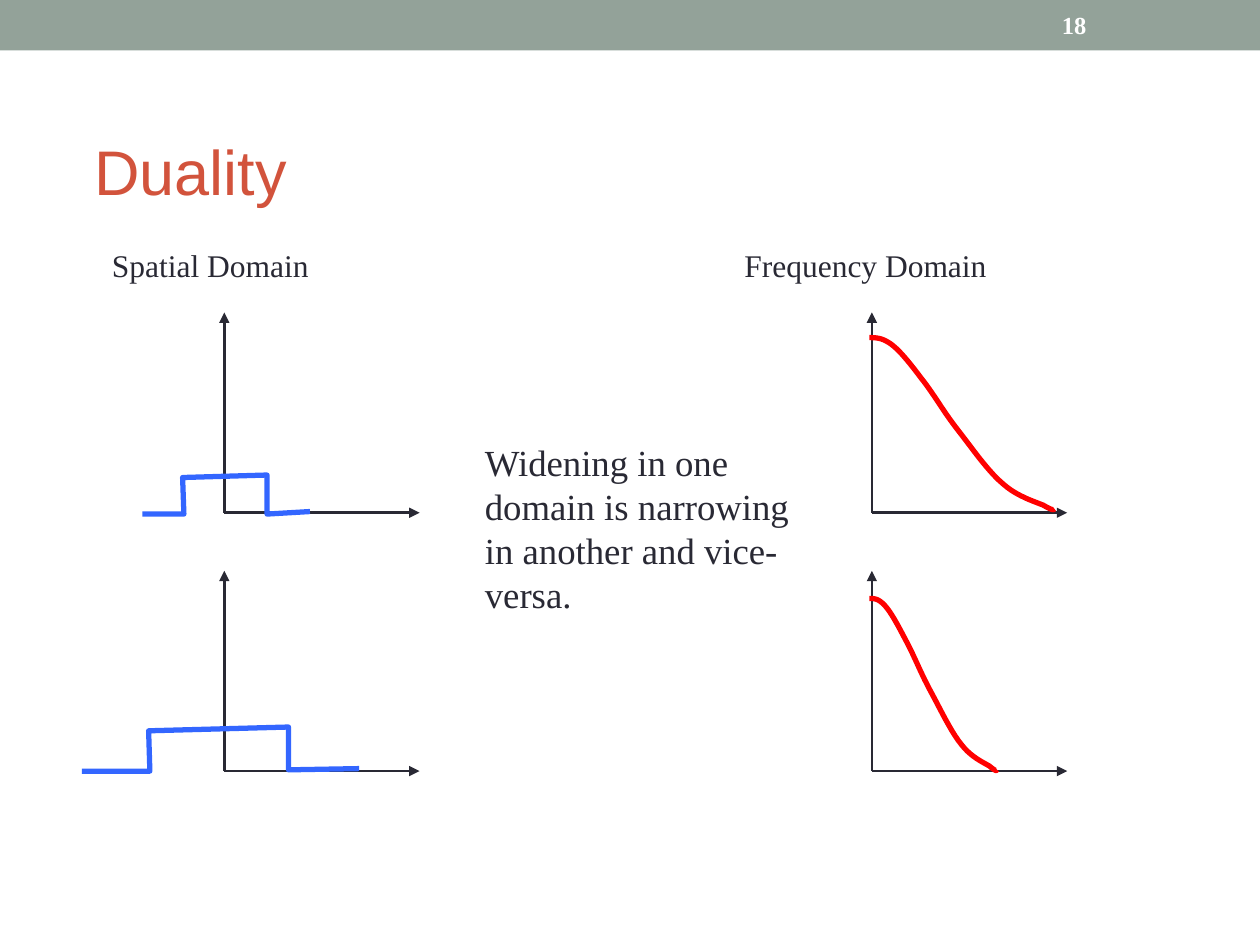
from lxml.etree import SubElement
from pptx import Presentation
from pptx.dml.color import RGBColor
from pptx.enum.shapes import MSO_CONNECTOR, MSO_SHAPE
from pptx.enum.text import MSO_ANCHOR
from pptx.oxml.ns import qn
from pptx.util import Inches, Pt

COLORS = {
    "band": "93A299",
    "title": "D2533C",
    "ink": "292934",
    "white": "FFFFFF",
    "pulse": "3366FF",
    "response": "FF0000",
}
SERIF = "Times New Roman"

AXIS_WIDTH, AXIS_HEIGHT = 1.55, 1.59
SPATIAL_X, FREQUENCY_X = 1.78, 6.92
ROWS = (4.07, 6.12)  # height of each row's horizontal axis

# Pulse corners, as offsets from the origin of the axes
NARROW_PULSE = [(0.68, -0.01), (0.34, 0.01), (0.34, -0.3),
                (-0.33, -0.28), (-0.32, 0.01), (-0.65, 0.01)]
WIDE_PULSE = [(1.07, -0.02), (0.51, -0.01), (0.51, -0.35),
              (-0.6, -0.32), (-0.59, 0), (-1.13, 0)]

# Bezier knots and handles of the frequency response, from its upper left end
RESPONSE = [(0, 0), (0.05, 0), (0.1, 0), (0.17, 0.05),
            (0.24, 0.1), (0.32, 0.2), (0.41, 0.32),
            (0.5, 0.43), (0.59, 0.59), (0.7, 0.73),
            (0.81, 0.87), (0.94, 1.06), (1.06, 1.16),
            (1.17, 1.26), (1.31, 1.3), (1.38, 1.33),
            (1.45, 1.37), (1.46, 1.37), (1.47, 1.36)]


def color(name):
    return RGBColor.from_string(COLORS[name])


def add_text(slide, box, text, size, ink="ink", font=SERIF, bold=False,
             anchor=MSO_ANCHOR.TOP):
    frame = slide.shapes.add_textbox(*map(Inches, box)).text_frame
    frame.word_wrap = True
    frame.vertical_anchor = anchor
    paragraph = frame.paragraphs[0]
    paragraph.text = text
    paragraph.font.name = font
    paragraph.font.size = Pt(size)
    paragraph.font.bold = bold
    paragraph.font.color.rgb = color(ink)


def add_arrow(shapes, start, end):
    arrow = shapes.add_connector(MSO_CONNECTOR.STRAIGHT,
                                 *map(Inches, (*start, *end)))
    arrow.line.color.rgb = color("ink")
    arrow.line.width = Pt(1.5)
    properties = arrow._element.spPr
    SubElement(properties.find(qn("a:ln")), qn("a:tailEnd"), type="triangle")
    SubElement(properties, qn("a:effectLst"))


def add_curve(shapes, points, ink):
    points = [(Inches(x), Inches(y)) for x, y in points]
    builder = shapes.build_freeform(*points[0])
    builder.add_line_segments(points[1:], close=False)
    curve = builder.convert_to_shape()
    curve.shadow.inherit = False
    curve.fill.background()
    curve.line.color.rgb = color(ink)
    curve.line.width = Pt(3)


def bezier_points(knots, steps=10):
    """Sample a chain of cubic Bezier segments."""
    points = [knots[0]]
    for first in range(0, len(knots) - 1, 3):
        segment = knots[first:first + 4]
        for step in range(1, steps + 1):
            t = step / steps
            weights = ((1 - t) ** 3, 3 * t * (1 - t) ** 2,
                       3 * t ** 2 * (1 - t), t ** 3)
            points.append(tuple(
                sum(weight * knot[axis] for weight, knot in zip(weights, segment))
                for axis in (0, 1)))
    return points


def add_plot(slide, x, y, offsets, ink):
    """Axes with their origin at (x, y), and a curve over them."""
    shapes = slide.shapes.add_group_shape().shapes
    add_arrow(shapes, (x, y), (x + AXIS_WIDTH, y))
    add_arrow(shapes, (x, y), (x, y - AXIS_HEIGHT))
    add_curve(shapes, [(x + dx, y + dy) for dx, dy in offsets], ink)


def add_header(slide, left, top, width, height):
    band = slide.shapes.add_shape(MSO_SHAPE.RECTANGLE,
                                  *map(Inches, (left, top, width, height)))
    band.shadow.inherit = False
    band.fill.solid()
    band.fill.fore_color.rgb = color("band")
    band.line.fill.background()
    add_text(slide, (left + 8.33, top + 0.02, 1.17, 0.36), "18", 14, "white",
             bold=True, anchor=MSO_ANCHOR.MIDDLE)


def add_spatial_column(slide, x):
    add_text(slide, (x - 0.99, 1.9, 1.78, 0.4), "Spatial Domain", 18)
    for y, pulse in zip(ROWS, (NARROW_PULSE, WIDE_PULSE)):
        add_plot(slide, x, y, pulse, "pulse")


def add_frequency_column(slide, x):
    add_text(slide, (x - 1.11, 1.9, 2.15, 0.4), "Frequency Domain", 18)
    # The wider pulse has the narrower response
    for y, stretch, rise in zip(ROWS, (1, 0.69), (1.39, 1.37)):
        response = [(dx * stretch - 0.02, dy - rise)
                    for dx, dy in bezier_points(RESPONSE)]
        add_plot(slide, x, y, response, "response")


def main():
    presentation = Presentation()
    presentation.slide_width = Inches(10)
    presentation.slide_height = Inches(7.5)
    slide = presentation.slides.add_slide(presentation.slide_layouts[6])

    add_header(slide, 0, 0, 10, 0.4)
    add_text(slide, (0.65, 1.02, 8.64, 0.66), "Duality", 36, "title", "Arial",
             anchor=MSO_ANCHOR.MIDDLE)
    add_spatial_column(slide, SPATIAL_X)
    add_frequency_column(slide, FREQUENCY_X)
    add_text(slide, (3.75, 3.44, 2.71, 1.51),
             "Widening in one domain is narrowing in another and vice-versa.", 21)

    presentation.save("out.pptx")


if __name__ == "__main__":
    main()
